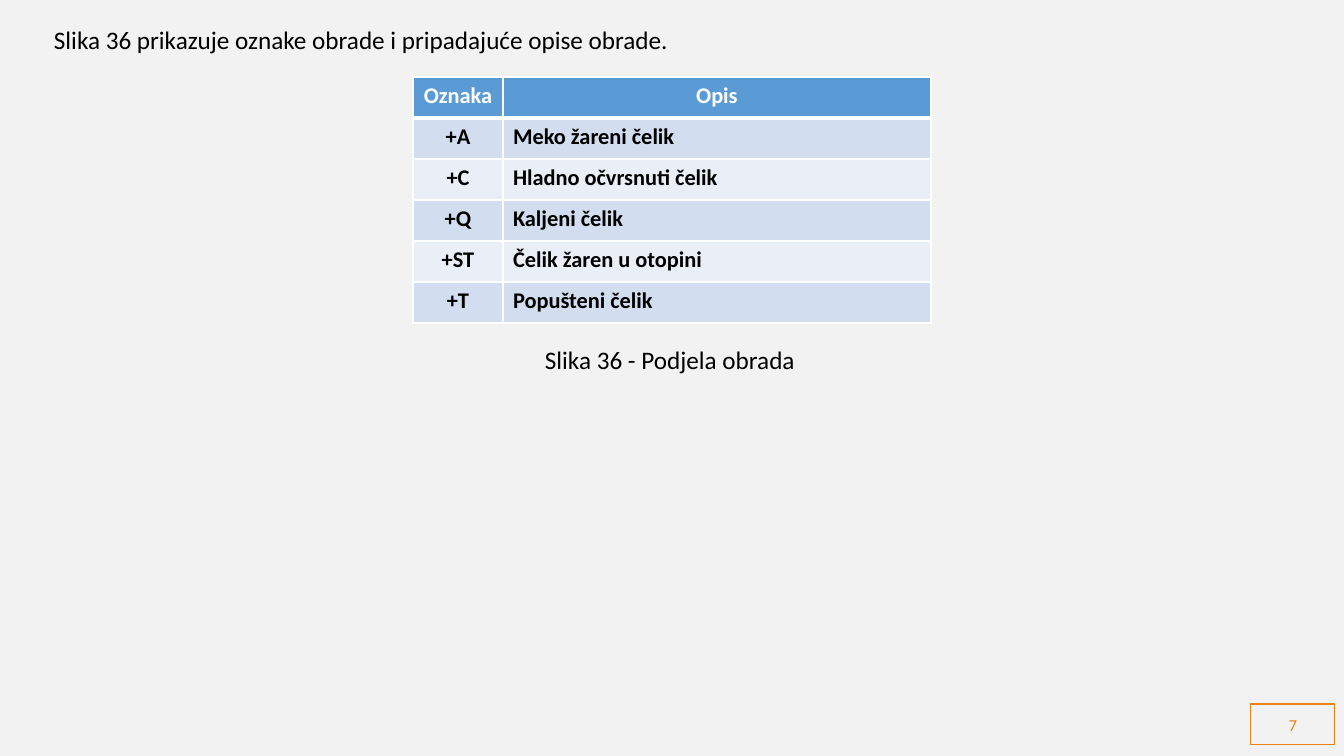
from lxml.etree import SubElement
from pptx import Presentation
from pptx.dml.color import RGBColor
from pptx.enum.shapes import MSO_SHAPE
from pptx.enum.text import MSO_ANCHOR, MSO_AUTO_SIZE, PP_ALIGN
from pptx.oxml.ns import qn
from pptx.util import Emu, Pt

INTRO = "Slika 36 prikazuje oznake obrade i pripadajuće opise obrade."
CAPTION = "Slika 36 - Podjela obrada"
PAGE_NUMBER = "7"
TREATMENTS = [
    ("Oznaka", "Opis"),
    ("+A", "Meko žareni čelik"),
    ("+C", "Hladno očvrsnuti čelik"),
    ("+Q", "Kaljeni čelik"),
    ("+ST", "Čelik žaren u otopini"),
    ("+T", "Popušteni čelik"),
]
LABELS = [(INTRO, (44, 19, 642, 40)), (CAPTION, (535, 339, 273, 40))]
TABLE_LEFT, TABLE_TOP, ROW_H = 413, 77, 41
COL_WIDTHS = (90, 428)
PAGE_BOX = (1251, 704, 84, 41)

BLACK, WHITE, ORANGE = "000000", "FFFFFF", "EB8113"
BACKGROUND, HEADER, BANDS = "F2F2F2", "5B9BD5", ("EAEFF7", "D2DEEF")


def px(n):
    return Emu(round(n * 914400 / 100.8))


def rgb(color):
    return RGBColor.from_string(color)


def write(tf, text, size, color, align=PP_ALIGN.LEFT, bold=False):
    p = tf.paragraphs[0]
    p.alignment = align
    r = p.add_run()
    r.text = text
    for name, value in {"name": "Calibri", "size": Pt(size), "bold": bold}.items():
        setattr(r.font, name, value)
    r.font.color.rgb = rgb(color)


def add_label(s, text, box):
    tf = s.shapes.add_textbox(*map(px, box)).text_frame
    tf.word_wrap = False
    tf.auto_size = MSO_AUTO_SIZE.SHAPE_TO_FIT_TEXT
    write(tf, text, 18, BLACK)


def add_borders(cell, widths):
    tc_pr = cell._tc.get_or_add_tcPr()
    for side, width in widths.items():
        ln = SubElement(tc_pr, qn(f"a:ln{side}"), w=str(Pt(width)))
        SubElement(SubElement(ln, qn("a:solidFill")), qn("a:srgbClr"), val=WHITE)


def add_treatments(s):
    size = sum(COL_WIDTHS), ROW_H * len(TREATMENTS)
    table = s.shapes.add_table(len(TREATMENTS), len(COL_WIDTHS),
                               *map(px, (TABLE_LEFT, TABLE_TOP, *size))).table
    for col, width in zip(table.columns, COL_WIDTHS):
        col.width = px(width)
    for i, row in enumerate(TREATMENTS):
        table.rows[i].height = px(ROW_H)
        for j, text in enumerate(row):
            cell = table.cell(i, j)
            add_borders(cell, {"L": 1, "R": 1, "T": 3 if i == 1 else 1,
                               "B": 3 if i == 0 else 1})
            cell.fill.solid()
            cell.fill.fore_color.rgb = rgb(BANDS[i % 2] if i else HEADER)
            align = PP_ALIGN.CENTER if i == 0 or j == 0 else PP_ALIGN.LEFT
            write(cell.text_frame, text, 16, BLACK if i else WHITE, align, True)


def add_page_number(s):
    sp = s.shapes.add_shape(MSO_SHAPE.RECTANGLE, *map(px, PAGE_BOX))
    sp.shadow.inherit = False
    sp.fill.background()
    sp.line.color.rgb = rgb(ORANGE)
    sp.line.width = Pt(0.75)
    sp.text_frame.vertical_anchor = MSO_ANCHOR.MIDDLE
    write(sp.text_frame, PAGE_NUMBER, 12, ORANGE, PP_ALIGN.CENTER)


def main():
    """Build the slide on steel treatment designations."""
    prs = Presentation()
    prs.slide_width, prs.slide_height = px(1344), px(756)
    s = prs.slides.add_slide(prs.slide_layouts[6])
    s.background.fill.solid()
    s.background.fill.fore_color.rgb = rgb(BACKGROUND)
    add_page_number(s)
    add_treatments(s)
    for text, box in LABELS:
        add_label(s, text, box)
    prs.save("out.pptx")


if __name__ == "__main__":
    main()
